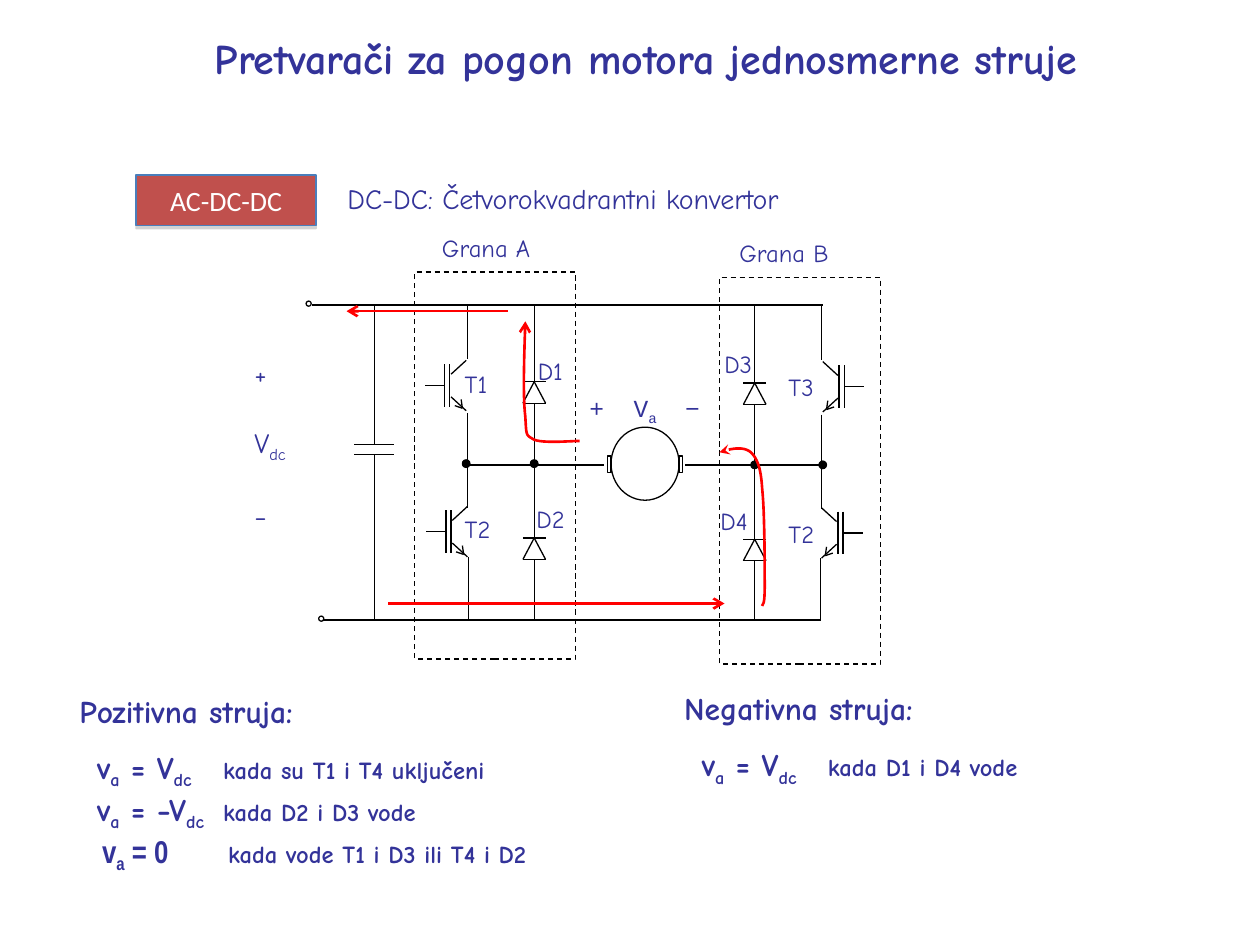
from dataclasses import dataclass
from lxml.etree import SubElement
from pptx import Presentation
from pptx.dml.color import RGBColor
from pptx.enum.dml import MSO_LINE
from pptx.enum.shapes import MSO_CONNECTOR, MSO_SHAPE
from pptx.enum.text import MSO_ANCHOR, MSO_AUTO_SIZE, PP_ALIGN
from pptx.oxml.ns import qn
from pptx.util import Cm, Pt


@dataclass(frozen=True)
class Theme:
    ink: str = "333399"
    wire: str = "000000"
    paper: str = "FFFFFF"
    current: str = "FF0000"
    badge: str = "C0504D"
    badge_line: str = "4A7EBB"
    shadow: str = "808080"
    font: str = "Comic Neue"
    title: int = 24
    heading: int = 18
    label: int = 16
    small: int = 14


@dataclass(frozen=True)
class Box:
    left: float
    top: float
    width: float
    height: float

    def inner(self, left, top, width, height):
        return Box(self.left + left, self.top + top, width, height)

    def emu(self):
        return [inches(n) for n in (self.left, self.top, self.width, self.height)]


THEME = Theme()


def inches(value):
    return Cm(value * 2.54)


def rgb(code):
    return RGBColor.from_string(code)


# Text
def write(para, text, size=THEME.small, font=THEME.font, color=THEME.ink, bold=False):
    """Add spans; pieces between underscores are subscripts."""
    for index, piece in enumerate(text.split("_")):
        if not piece:
            continue
        span = para.add_run()
        span.text = piece
        span.font.size, span.font.name, span.font.bold = Pt(size), font, bold
        span.font.color.rgb = rgb(color)
        if index % 2:
            span.font._element.set("baseline", "-25000")


def set_tabs(para, *stops):
    tabs = SubElement(para._p.get_or_add_pPr(), qn("a:tabLst"))
    for stop in stops:
        SubElement(tabs, qn("a:tab"), pos=str(inches(stop)), algn="l")


def plain_list(para, indent=0):
    properties = para._p.get_or_add_pPr()
    properties.set("marL", str(inches(indent)))
    properties.set("indent", "0")
    para.space_before = Pt(0)
    SubElement(properties, qn("a:buNone"))


def place(holder, box, anchor=MSO_ANCHOR.TOP, wrap=True):
    holder.left, holder.top, holder.width, holder.height = box.emu()
    frame = holder.text_frame
    frame.auto_size, frame.word_wrap = MSO_AUTO_SIZE.NONE, wrap
    frame.vertical_anchor = anchor
    return frame


def label(page, box, text, **style):
    frame = page.shapes.add_textbox(*box.emu()).text_frame
    frame.word_wrap = True
    write(frame.paragraphs[0], text, **style)
    return frame


# Drawing
def style_line(shape, color, width, arrow=None):
    shape.line.color.rgb = rgb(color)
    shape.line.width = Pt(width)
    if arrow:
        SubElement(shape.element.spPr.find(qn("a:ln")), qn("a:headEnd"), type=arrow)


def line(page, box, start, end, color=THEME.wire, width=0.75, arrow=None):
    points = [inches(n) for x, y in (start, end) for n in (box.left + x, box.top + y)]
    wire = page.shapes.add_connector(MSO_CONNECTOR.STRAIGHT, *points)
    style_line(wire, color, width, arrow)
    SubElement(wire.element.spPr, qn("a:effectLst"))


def solid(page, kind, box, fill=None, color=THEME.wire):
    shape = page.shapes.add_shape(kind, *box.emu())
    shape.shadow.inherit = False
    if fill:
        shape.fill.solid()
        shape.fill.fore_color.rgb = rgb(fill)
    else:
        shape.fill.background()
    style_line(shape, color, 0.75)
    return shape


def curve(page, box, points, arrow, steps=12):
    """Draw joined cubic curves through points: start, then triples."""
    trace = []
    for first in range(0, len(points) - 1, 3):
        a, b, c, d = points[first:first + 4]
        for step in range(1, steps + 1):
            t = step / steps
            weights = ((1 - t) ** 3, 3 * t * (1 - t) ** 2, 3 * t * t * (1 - t), t ** 3)
            x, y = (sum(w * p[axis] for w, p in zip(weights, (a, b, c, d))) for axis in (0, 1))
            trace.append((inches(box.left + x), inches(box.top + y)))
    x, y = points[0]
    builder = page.shapes.build_freeform(inches(box.left + x), inches(box.top + y))
    builder.add_line_segments(trace, close=False)
    shape = builder.convert_to_shape()
    shape.shadow.inherit = False
    shape.fill.background()
    style_line(shape, THEME.current, 1.5, arrow)


# One leg: two transistors, two diodes, joined at the middle
def leg(page, box, mirrored=False):
    def across(x):
        return box.width - x if mirrored else x

    def wire(x1, y1, x2, y2):
        line(page, box, (across(x1), y1), (across(x2), y2))

    for x, middle in ((0, 0.9), (0.01, 2.06)):
        for bar in (0.24, 0.28):
            wire(x + bar, middle - 0.17, x + bar, middle + 0.17)
        for sign in (-1, 1):
            wire(x + 0.41, middle + sign * 0.2, x + 0.29, middle + sign * 0.09)
        wire(x + 0.24, middle, x + 0.08, middle)
        wire(x + 0.37, middle + 0.11, x + 0.38, middle + 0.18)
        wire(x + 0.32, middle + 0.16, x + 0.38, middle + 0.18)
    for top in (0.87, 2.11):
        for y in (top, top + 0.17):
            wire(0.86, y, 1.04, y)
        for x in (0.86, 1.04):
            wire(x, top + 0.17, 0.95, top)
    for x, top, bottom in ((0.42, 0.26, 0.69), (0.42, 1.12, 1.87), (0.43, 2.26, 2.76),
                           (0.95, 0.26, 0.87), (0.95, 1.04, 2.11), (0.95, 2.28, 2.76)):
        wire(x, top, x, bottom)
    for x in (0.41, 0.95):
        solid(page, MSO_SHAPE.OVAL, box.inner(across(x) - 0.03, 1.49, 0.06, 0.06), THEME.wire)


def motor(page, box):
    solid(page, MSO_SHAPE.OVAL, box.inner(0.03, 0, 0.54, 0.58), THEME.paper)
    for left in (0, 0.57):
        solid(page, MSO_SHAPE.RECTANGLE, box.inner(left, 0.23, 0.03, 0.13), THEME.paper)


def circuit(page, box):
    # Rails, terminals and capacitor
    for start, end in (((0.48, 0.42), (4.53, 0.42)), ((0.55, 2.92), (4.51, 2.92)),
                       ((1.72, 1.69), (2.79, 1.69)), ((3.44, 1.69), (4.5, 1.69)),
                       ((0.81, 1.53), (1.13, 1.53)), ((0.81, 1.61), (1.13, 1.61)),
                       ((0.97, 0.42), (0.97, 1.53)), ((0.97, 1.61), (0.97, 2.92))):
        line(page, box, start, end)
    for left, top in ((0.43, 0.39), (0.53, 2.89)):
        solid(page, MSO_SHAPE.OVAL, box.inner(left, top, 0.04, 0.04), THEME.paper)
    leg(page, box.inner(1.29, 0.16, 1.28, 3.07))
    leg(page, box.inner(3.66, 0.17, 1.28, 3.07), mirrored=True)
    motor(page, box.inner(2.82, 1.39, 0.6, 0.58))
    for left, top in ((1.29, 0.16), (3.71, 0.2)):
        frame = solid(page, MSO_SHAPE.RECTANGLE, box.inner(left, top, 1.28, 3.07))
        frame.line.dash_style = MSO_LINE.DASH

    # Names of the parts
    for text, left, top in (("T1", 1.59, 0.88), ("T2", 1.59, 2.03), ("T3", 4.16, 0.9),
                            ("T2", 4.16, 2.07), ("D1", 2.17, 0.78), ("D3", 3.65, 0.72),
                            ("D4", 3.62, 1.97), ("D2", 2.16, 1.95)):
        label(page, box.inner(left, top, 0.7, 0.41), text)
    for text, left, top in (("Grana A", 1.41, -0.2), ("Grana B", 3.77, -0.16)):
        label(page, box.inner(left, top, 1.2, 0.41), text)
    voltage = label(page, box.inner(2.58, 1.07, 1.16, 0.49), "+\tV_a_\t−", font="Courier New")
    set_tabs(voltage.paragraphs[0], 0.35, 0.76)
    supply = label(page, box.inner(-0.08, 0.78, 0.7, 1.72), "+", size=THEME.label)
    for text in ("V_dc_", "−"):
        para = supply.add_paragraph()
        para.space_before = Pt(20)
        write(para, text, size=THEME.label)

    # Current path
    curve(page, box, [(2.17, 0.55), (2.16, 0.85), (2.15, 1.15), (2.17, 1.31), (2.18, 1.46),
                      (2.17, 1.45), (2.24, 1.49), (2.31, 1.52), (2.54, 1.5), (2.6, 1.5)], "arrow")
    curve(page, box, [(3.71, 1.59), (3.8, 1.56), (3.9, 1.54), (3.96, 1.59), (4.01, 1.64),
                      (4.04, 1.71), (4.05, 1.88), (4.07, 2.06), (4.07, 2.49), (4.07, 2.64),
                      (4.07, 2.8), (4.06, 2.78), (4.05, 2.81)], "stealth")
    for start, end in (((3.75, 2.79), (1.08, 2.79)), ((0.75, 0.47), (2.03, 0.47))):
        line(page, box, start, end, THEME.current, 1.5, "arrow")


def header(page, box):
    frame = place(page.shapes.title, box.inner(0, 0, 8.23, 0.5), wrap=False)
    frame.paragraphs[0].alignment = PP_ALIGN.CENTER
    write(frame.paragraphs[0], "Pretvarači za pogon motora jednosmerne struje",
          size=THEME.title, bold=True)
    badge = solid(page, MSO_SHAPE.RECTANGLE, box.inner(0.07, 1.18, 1.43, 0.4),
                  THEME.badge, THEME.badge_line)
    shadow = SubElement(badge.element.spPr.find(qn("a:effectLst")), qn("a:outerShdw"),
                        dist=str(Pt(1.8)), dir="5400000", rotWithShape="0")
    tint = SubElement(shadow, qn("a:srgbClr"), val=THEME.shadow)
    SubElement(tint, qn("a:alpha"), val="35000")
    badge.text_frame.vertical_anchor = MSO_ANCHOR.MIDDLE
    para = badge.text_frame.paragraphs[0]
    para.alignment = PP_ALIGN.CENTER
    write(para, "AC-DC-DC", size=THEME.label, font="Calibri", color=THEME.paper)
    label(page, box.inner(1.65, 1.18, 4, 0.37), "DC-DC: Četvorokvadrantni konvertor",
          size=THEME.label)


def states(heading, body, box, title, rows):
    """Fill a heading and its list of voltages and conditions."""
    para = place(heading, box.inner(0, 0, 2.5, 0.4)).paragraphs[0]
    plain_list(para)
    write(para, title, size=THEME.heading, bold=True)
    frame = place(body, box.inner(0.14, 0.45, 4.3, 0.4 + 0.33 * (len(rows) - 1)))
    for index, (formula, condition, font, indent, stop) in enumerate(rows):
        para = frame.paragraphs[0] if index == 0 else frame.add_paragraph()
        para.line_spacing = Pt(24)
        plain_list(para, indent)
        set_tabs(para, stop)
        write(para, formula + "\t", size=THEME.heading, font=font, bold=True)
        write(para, condition, bold=True)


def main():
    deck = Presentation()
    deck.slide_width, deck.slide_height = inches(10), inches(7.5)
    page = deck.slides.add_slide(deck.slide_layouts.get_by_name("Comparison"))
    header(page, Box(1.01, 0.21, 8.23, 1.6))
    circuit(page, Box(2, 2, 5, 3.3))
    holders = {holder.placeholder_format.idx: holder for holder in page.placeholders}
    states(holders[1], holders[2], Box(0.53, 5.44, 4.5, 1.6), "Pozitivna struja:", [
        ("v_a_ = V_dc_", "kada su T1 i T4 uključeni", THEME.font, 0, 1.02),
        ("v_a_ = −V_dc_", "kada D2 i D3 vode", THEME.font, 0, 0.98),
        ("v_a_ = 0", "kada vode T1 i D3 ili T4 i D2", "Arial Narrow", 0.04, 1.19)])
    states(holders[3], holders[4], Box(5.33, 5.42, 4.5, 1), "Negativna struja:", [
        ("v_a_ = V_dc_", "kada D1 i D4 vode", THEME.font, 0, 1.1)])
    deck.save("out.pptx")


if __name__ == "__main__":
    main()
